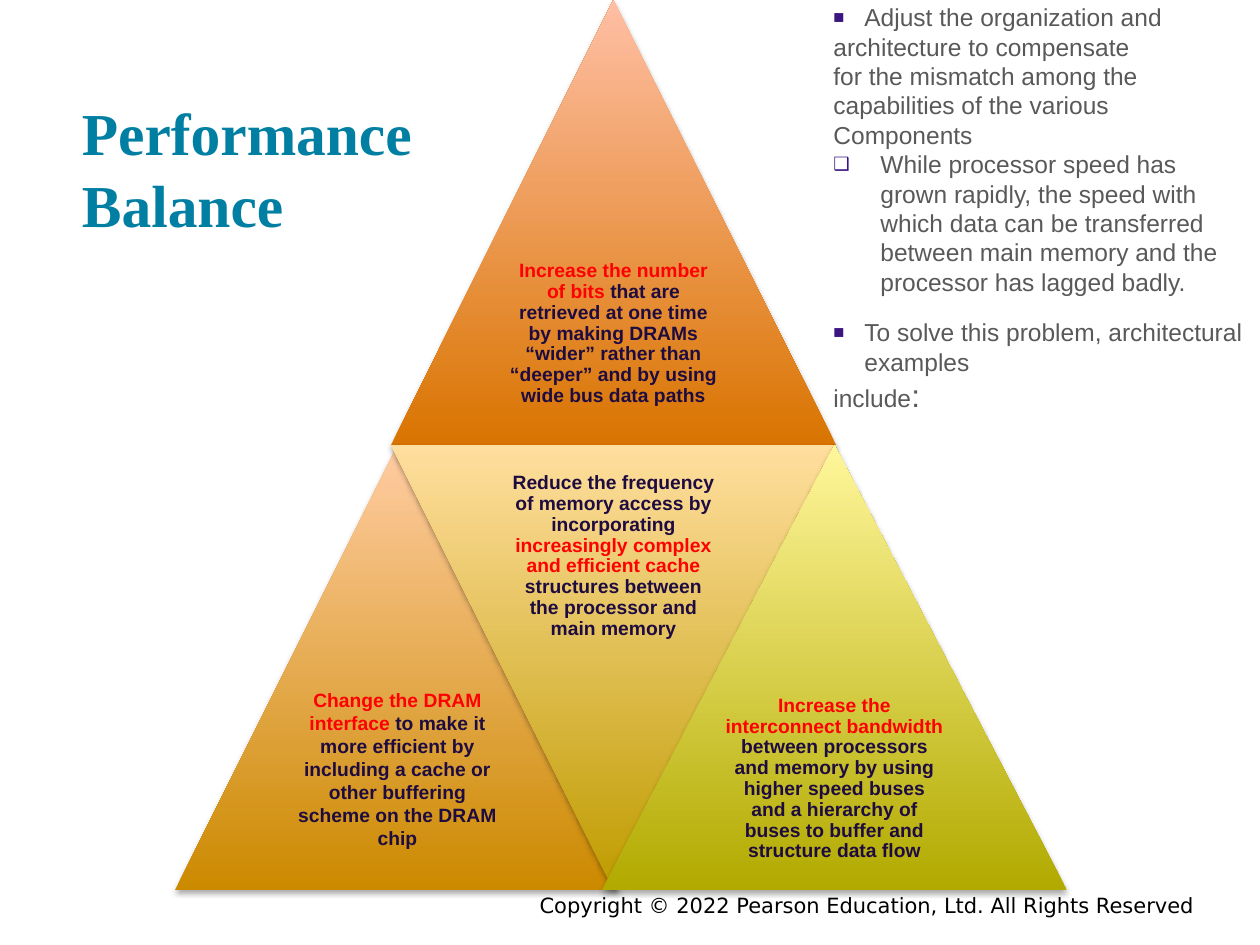
"""Build the Performance Balance slide: four stacked triangles beside a bullet list."""
from dataclasses import dataclass

from lxml.etree import SubElement
from pptx import Presentation
from pptx.dml.color import RGBColor
from pptx.enum.shapes import MSO_SHAPE
from pptx.enum.text import MSO_ANCHOR, MSO_AUTO_SIZE, PP_ALIGN
from pptx.oxml.ns import qn
from pptx.util import Emu, Pt


@dataclass(frozen=True)
class Theme:
    title: str = "007FA3"
    body: str = "595959"
    bullet: str = "3C1581"
    key: str = "FF0000"
    dark: str = "1E0B40"
    black: str = "000000"
    title_size: int = 34
    colon_size: int = 18
    body_size: int = 14
    footer_size: int = 12
    label_size: int = 11
    sans: str = "Arial"
    serif: str = "Times New Roman"
    footer_font: str = "DejaVu Sans"


@dataclass(frozen=True)
class Phrase:
    text: str
    color: str


@dataclass(frozen=True)
class Triangle:
    left: int
    top: int
    width: int
    base_color: str
    tip_color: str
    phrases: tuple[Phrase, ...]
    inverted: bool = False
    line_spacing: float = 0.9
    bottom_inset: int = 6


@dataclass(frozen=True)
class Point:
    text: str
    bullet: str = ""
    margin: int = 63
    hanging: int = 31
    space_before: int = 0


THEME = Theme()
SIDE = 445
TRIANGLES = (
    Triangle(391, 0, SIDE, "D97400", "FFBFA5", (
        Phrase("Increase the number of bits ", THEME.key),
        Phrase("that are retrieved at one time by making DRAMs “wider” rather than "
               "“deeper” and by using wide bus data paths", THEME.dark))),
    Triangle(175, SIDE, SIDE, "CC8A00", "FFCCA2", (
        Phrase("Change the DRAM interface", THEME.key),
        Phrase(" to make it more efficient by including a cache or other buffering "
               "scheme on the DRAM chip", THEME.dark)),
        line_spacing=1.0, bottom_inset=26),
    Triangle(391, SIDE, SIDE, "BF9C00", "FFDE9E", (
        Phrase("Reduce the frequency of memory access by incorporating ", THEME.dark),
        Phrase("increasingly complex and efficient cache ", THEME.key),
        Phrase("structures between the processor and main memory", THEME.dark)),
        inverted=True),
    Triangle(602, SIDE, 465, "B2AA00", "FFF69B", (
        Phrase("Increase the interconnect bandwidth ", THEME.key),
        Phrase("between processors and memory by using higher speed buses and a "
               "hierarchy of buses to buffer and structure data flow", THEME.dark))),
)
POINTS = (
    Point("Adjust the organization and", "■"),
    Point("architecture to compensate"),
    Point("for the mismatch among the"),
    Point("capabilities of the various"),
    Point("Components"),
    Point("While processor speed has grown rapidly, the speed with which data can be "
          "transferred between main memory and the processor has lagged badly.",
          "❑", margin=79, hanging=47),
    Point("To solve this problem, architectural examples", "■", space_before=12),
    Point("include"),
)


def px(length: float) -> Emu:
    """Turn pixels into EMU."""
    return Emu(round(length * 914400 / 126))


def style(run, color: str, size: int, face: str = THEME.sans, bold: bool = False) -> None:
    """Format one run."""
    run.font.name = face
    run.font.size = Pt(size)
    run.font.bold = bold
    run.font.color.rgb = RGBColor.from_string(color)


def add_frame(slide, left: float, top: float, width: float, height: float):
    """Add a wrapping text box and return its text frame."""
    frame = slide.shapes.add_textbox(px(left), px(top), px(width), px(height)).text_frame
    frame.word_wrap = True
    return frame


def add_shadow(shape) -> None:
    """Give a shape a soft shadow straight below it."""
    shape.shadow.inherit = False
    effects = shape._element.spPr.find(qn("a:effectLst"))
    shadow = SubElement(effects, qn("a:outerShdw"), blurRad="40000", dist="23000",
                        dir="5400000", rotWithShape="0")
    color = SubElement(shadow, qn("a:srgbClr"), val=THEME.black)
    SubElement(color, qn("a:alpha"), val="35000")


def add_triangle(slide, triangle: Triangle) -> None:
    """Draw a triangle and the label inside its wide half."""
    shape = slide.shapes.add_shape(
        MSO_SHAPE.ISOSCELES_TRIANGLE, px(triangle.left), px(triangle.top),
        px(triangle.width), px(SIDE))
    shape.rotation = 180 if triangle.inverted else 0
    shape.line.fill.background()
    shape.fill.gradient()
    shape.fill.gradient_angle = 90
    for stop, color in zip(shape.fill.gradient_stops,
                           (triangle.base_color, triangle.tip_color)):
        stop.color.rgb = RGBColor.from_string(color)
    shape._element.spPr.find(qn("a:gradFill")).set("rotWithShape", "0")
    add_shadow(shape)

    label_top = triangle.top + (0 if triangle.inverted else SIDE / 2)
    label = add_frame(slide, triangle.left + triangle.width / 4, label_top,
                      triangle.width / 2, SIDE / 2)
    label.vertical_anchor = MSO_ANCHOR.MIDDLE
    label.margin_left = label.margin_right = label.margin_top = px(6)
    label.margin_bottom = px(triangle.bottom_inset)
    paragraph = label.paragraphs[0]
    paragraph.alignment = PP_ALIGN.CENTER
    paragraph.line_spacing = triangle.line_spacing
    for phrase in triangle.phrases:
        run = paragraph.add_run()
        run.text = phrase.text
        style(run, phrase.color, THEME.label_size, bold=True)


def format_point(paragraph, point: Point) -> None:
    """Fill one paragraph of the list and set its indent and bullet."""
    paragraph.text = point.text
    paragraph.level = 1
    properties = paragraph._p.get_or_add_pPr()
    properties.set("marL", str(px(point.margin)))
    properties.set("indent", str(-px(point.hanging)))
    if point.bullet:
        color = SubElement(properties, qn("a:buClr"))
        SubElement(color, qn("a:srgbClr"), val=THEME.bullet)
        SubElement(properties, qn("a:buSzPct"), val="75000")
        SubElement(properties, qn("a:buFont"), typeface=THEME.sans)
        SubElement(properties, qn("a:buChar"), char=point.bullet)
    paragraph.space_before = Pt(point.space_before)
    style(paragraph.runs[0], THEME.body, THEME.body_size)


def add_points(slide) -> None:
    """Write the list in the top right corner."""
    frame = add_frame(slide, 789, -4, 471, 481)
    frame.auto_size = MSO_AUTO_SIZE.SHAPE_TO_FIT_TEXT
    for index, point in enumerate(POINTS):
        paragraph = frame.add_paragraph() if index else frame.paragraphs[0]
        format_point(paragraph, point)
    colon = frame.paragraphs[-1].add_run()
    colon.text = ":"
    style(colon, THEME.body, THEME.colon_size)


def add_title(slide) -> None:
    """Move and format the title placeholder."""
    title = slide.shapes.title
    title.left, title.top, title.width, title.height = px(69), px(67), px(655), px(185)
    frame = title.text_frame
    frame.text = "Performance \vBalance"
    frame.vertical_anchor = MSO_ANCHOR.BOTTOM
    frame.margin_left = frame.margin_right = px(13)
    frame.margin_top = frame.margin_bottom = px(13)
    paragraph = frame.paragraphs[0]
    paragraph.alignment = PP_ALIGN.LEFT
    for run in paragraph.runs:
        style(run, THEME.title, THEME.title_size, THEME.serif, bold=True)


def add_copyright(slide) -> None:
    """Write the copyright line at the foot of the slide."""
    frame = add_frame(slide, 220, 886, 987, 28)
    frame.text = "Copyright © 2022 Pearson Education, Ltd. All Rights Reserved"
    paragraph = frame.paragraphs[0]
    paragraph.alignment = PP_ALIGN.RIGHT
    style(paragraph.runs[0], THEME.black, THEME.footer_size, THEME.footer_font)


def main() -> None:
    """Build and save the slide."""
    deck = Presentation()
    deck.slide_width, deck.slide_height = px(1260), px(945)
    slide = deck.slides.add_slide(deck.slide_layouts[5])
    add_copyright(slide)
    add_title(slide)
    for triangle in TRIANGLES:
        add_triangle(slide, triangle)
    add_points(slide)
    deck.save("out.pptx")


if __name__ == "__main__":
    main()
